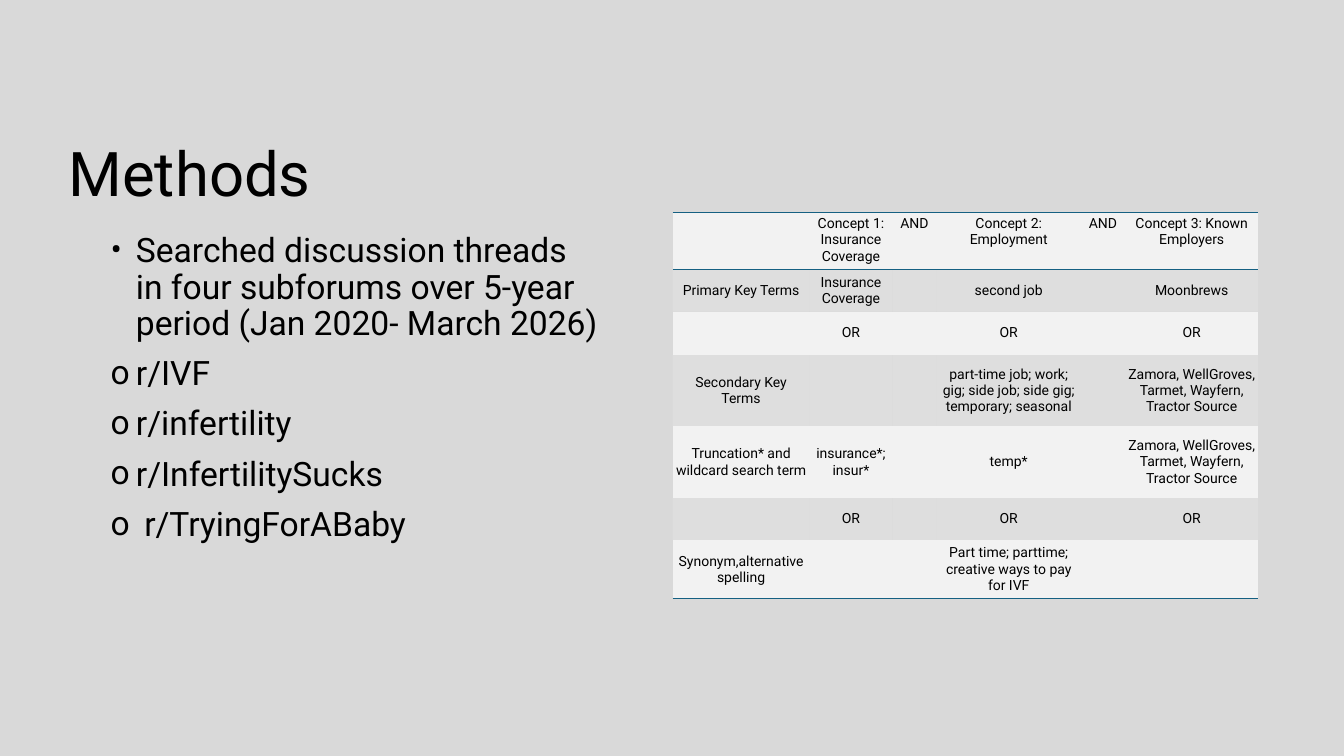
import pptx
import pptx.dml.color
import pptx.enum.text
import pptx.oxml
import pptx.oxml.ns
import pptx.util
from pptx.dml.color import RGBColor
from pptx.enum.text import MSO_ANCHOR, PP_ALIGN
from pptx.util import Inches

BACKGROUND = RGBColor(0xD9, 0xD9, 0xD9)
BAND = RGBColor(0xF2, 0xF2, 0xF2)
RULE = RGBColor(0x15, 0x60, 0x82)
INK = RGBColor(0, 0, 0)
FONT = "Roboto"
NO_GRID_STYLE = "{2D5ABB26-0587-4C30-8999-92F81FD0307C}"

METHODS = [
    ("•", "Searched discussion threads in four subforums over 5-year period (Jan 2020- March 2026)"),
    ("o", "r/IVF"),
    ("o", "r/infertility"),
    ("o", "r/InfertilitySucks"),
    ("o", " r/TryingForABaby"),
]
EMPLOYERS = "Zamora, WellGroves, Tarmet, Wayfern, Tractor Source"
OR_ROW = ["", "OR", "", "OR", "", "OR"]
SEARCH_TERMS = [
    ["", "Concept 1: Insurance Coverage", "AND", "Concept 2: Employment", "AND",
     "Concept 3: Known Employers"],
    ["Primary Key Terms", "Insurance Coverage", "", "second job", "", "Moonbrews"],
    OR_ROW,
    ["Secondary Key Terms", "", "",
     "part-time job; work; gig; side job; side gig; temporary; seasonal", "", EMPLOYERS],
    ["Truncation* and wildcard search term", "insurance*; insur*", "", "temp*", "", EMPLOYERS],
    OR_ROW,
    ["Synonym,alternative spelling", "", "",
     "Part time; parttime; creative ways to pay for IVF", "", ""],
]
COLUMN_WIDTHS = [1.36, 0.82, 0.44, 1.43, 0.44, 1.32]
ROW_HEIGHTS = [0.56, 0.42, 0.43, 0.71, 0.71, 0.42, 0.58]


def set_font(para, size):
    """Give a paragraph the slide's font at the given point size."""
    para.font.name = FONT
    para.font.size = pptx.util.Pt(size)
    para.font.bold = False
    para.font.color.rgb = INK


def add_bullet(para, mark):
    """Hang a paragraph behind a bullet character."""
    properties = para._p.get_or_add_pPr()
    properties.set("marL", str(Inches(0.25)))
    properties.set("indent", str(-Inches(0.25)))
    for tag, name, value in (("a:buFont", "typeface", FONT), ("a:buChar", "char", mark)):
        bullet = pptx.oxml.parse_xml(f"<{tag} {pptx.oxml.ns.nsdecls('a')} {name}=\"{value}\"/>")
        properties.append(bullet)


def add_title(page, left, top, width, height):
    """Place the slide title at the bottom of its box."""
    title = page.shapes.title
    title.left, title.top = Inches(left), Inches(top)
    title.width, title.height = Inches(width), Inches(height)
    title.text_frame.text = "Methods"
    title.text_frame.vertical_anchor = MSO_ANCHOR.BOTTOM
    para = title.text_frame.paragraphs[0]
    para.alignment = PP_ALIGN.LEFT
    para.line_spacing = 0.9
    set_font(para, 44)


def add_methods(page, left, top, width, height):
    """Place the bulleted description of the search."""
    box = page.shapes.add_textbox(Inches(left), Inches(top), Inches(width), Inches(height))
    frame = box.text_frame
    frame.word_wrap = True
    for index, (mark, text) in enumerate(METHODS):
        para = frame.add_paragraph() if index else frame.paragraphs[0]
        para.text = text
        para.line_spacing = 0.9
        if index:
            para.space_before = pptx.util.Pt(10)
        add_bullet(para, mark)
        set_font(para, 24)


def add_borders(cell, sides):
    """Draw one-point rules on the listed sides of a cell."""
    properties = cell._tc.get_or_add_tcPr()
    for index, side in enumerate(sides):
        line = pptx.oxml.parse_xml(
            f'<a:ln{side} {pptx.oxml.ns.nsdecls("a")} w="12700"><a:solidFill>'
            f'<a:srgbClr val="{RULE}"/></a:solidFill></a:ln{side}>')
        properties.insert(index, line)


def fill_cell(cell, text, is_header, is_faint):
    """Write, align and shade one table cell."""
    cell.text = text
    cell.margin_left = cell.margin_right = Inches(0.03)
    cell.margin_top = cell.margin_bottom = Inches(0.03)
    cell.vertical_anchor = MSO_ANCHOR.TOP if is_header else MSO_ANCHOR.MIDDLE
    para = cell.text_frame.paragraphs[0]
    para.alignment = PP_ALIGN.CENTER
    set_font(para, 10)
    cell.fill.solid()
    cell.fill.fore_color.rgb = BAND
    if is_faint:
        color = cell._tc.tcPr.find(".//" + pptx.oxml.ns.qn("a:srgbClr"))
        color.append(pptx.oxml.parse_xml(
            f'<a:alpha {pptx.oxml.ns.nsdecls("a")} val="20000"/>'))


def add_search_table(page, left, top):
    """Place the table of search terms with its banded rows and rules."""
    frame = page.shapes.add_table(
        len(ROW_HEIGHTS), len(COLUMN_WIDTHS), Inches(left), Inches(top),
        Inches(sum(COLUMN_WIDTHS)), Inches(sum(ROW_HEIGHTS)))
    table = frame.table
    table._tbl.tblPr.find(pptx.oxml.ns.qn("a:tableStyleId")).text = NO_GRID_STYLE
    for column, width in zip(table.columns, COLUMN_WIDTHS):
        column.width = Inches(width)
    sides = {0: "TB", len(ROW_HEIGHTS) - 1: "B"}
    for row, height in enumerate(ROW_HEIGHTS):
        table.rows[row].height = Inches(height)
        for column, text in enumerate(SEARCH_TERMS[row]):
            cell = table.cell(row, column)
            fill_cell(cell, text, row == 0, row % 2 == 1)
            add_borders(cell, sides.get(row, ""))


def main():
    """Build the deck and save it."""
    deck = pptx.Presentation()
    deck.slide_width, deck.slide_height = Inches(13.33), Inches(7.5)
    page = deck.slides.add_slide(deck.slide_layouts[5])
    page.background.fill.solid()
    page.background.fill.fore_color.rgb = BACKGROUND
    add_title(page, 0.58, 0.36, 5.03, 1.77)
    add_methods(page, 1, 2.27, 5.03, 3.77)
    add_search_table(page, 6.67, 2.11)
    deck.save("out.pptx")


if __name__ == "__main__":
    main()
